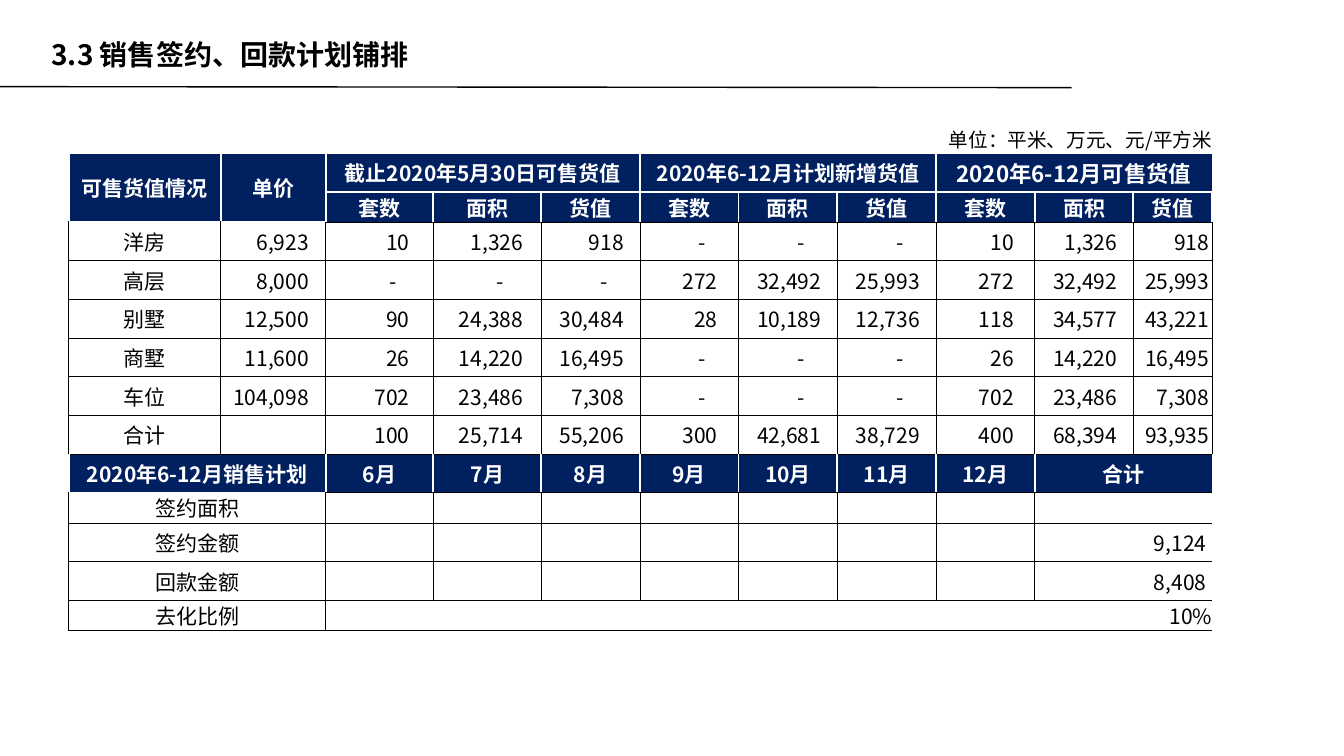
from dataclasses import dataclass, replace

import lxml.etree
import pptx
import pptx.dml.color
import pptx.enum.shapes
import pptx.enum.text
import pptx.oxml.ns
import pptx.util

Pt = pptx.util.Pt
qn = pptx.oxml.ns.qn
Align = pptx.enum.text.PP_ALIGN
Anchor = pptx.enum.text.MSO_ANCHOR

FONT = "Noto Sans CJK SC"
BLACK, WHITE, NAVY = "000000", "FFFFFF", "002060"
PLAIN_TABLE = "{2D5ABB26-0587-4C30-8999-92F81FD0307C}"
COLUMN_WIDTHS = [108.7, 74.9, 77, 77] + [70.5] * 6 + [56.2]
TALL, LOW = 27.6, 21.8
ROW_HEIGHTS = [20.7, TALL, LOW] + [TALL] * 7 + [LOW, TALL, TALL, LOW]
NUMBER_INSETS = [0, 12, 17, 13, 11.5, 15, 11.5, 11.5, 15, 11.5, 2]
DASH_INSET = 19

STOCK = [
    ("洋房", "6,923 10 1,326 918 - - - 10 1,326 918"),
    ("高层", "8,000 - - - 272 32,492 25,993 272 32,492 25,993"),
    ("别墅", "12,500 90 24,388 30,484 28 10,189 12,736 118 34,577 43,221"),
    ("商墅", "11,600 26 14,220 16,495 - - - 26 14,220 16,495"),
    ("车位", "104,098 702 23,486 7,308 - - - 702 23,486 7,308"),
]
STOCK_TOTAL = "100 25,714 55,206 300 42,681 38,729 400 68,394 93,935"


@dataclass(frozen=True)
class Border:
    color: str
    width: float


THIN = Border(BLACK, 0.5)
THICK = Border(WHITE, 1.5)


@dataclass(frozen=True)
class Look:
    size: float = 15
    bold: bool = False
    ink: str = BLACK
    fill: str | None = None
    align: Align = Align.CENTER
    left_inset: float = 0
    right_inset: float = 0
    left: Border | None = THIN
    top: Border | None = THIN
    right: Border | None = THIN
    bottom: Border | None = THIN


@dataclass(frozen=True)
class Entry:
    row: int
    column: int
    text: str = ""
    look: Look = Look()
    rows: int = 1
    columns: int = 1


BODY = Look()
HEAD = Look(bold=True, ink=WHITE, fill=NAVY, left=THICK, top=THICK, right=THICK, bottom=THICK)
HEAD_OVER_BODY = replace(HEAD, bottom=THIN)
MONTH = replace(HEAD_OVER_BODY, top=THIN)
UNIT = Look(size=14, align=Align.RIGHT, left=None, top=None, right=None, bottom=THICK)


def rgb(color: str) -> pptx.dml.color.RGBColor:
    return pptx.dml.color.RGBColor.from_string(color)


def style_paragraph(paragraph, size: float, bold: bool, color: str, align: Align) -> None:
    paragraph.alignment = align
    font = paragraph.font
    font.size, font.bold, font.name = Pt(size), bold, FONT
    font.color.rgb = rgb(color)
    east_asian = lxml.etree.Element(qn("a:ea"), typeface=FONT)
    paragraph._p.pPr.find(qn("a:defRPr")).find(qn("a:latin")).addnext(east_asian)


def draw_border(cell, side: str, border: Border | None) -> None:
    properties = cell._tc.get_or_add_tcPr()
    line = lxml.etree.SubElement(properties, qn(f"a:{side}"))
    if border is None:
        lxml.etree.SubElement(line, qn("a:noFill"))
        return
    line.set("w", str(Pt(border.width)))
    fill = lxml.etree.SubElement(line, qn("a:solidFill"))
    lxml.etree.SubElement(fill, qn("a:srgbClr"), val=border.color)


def fill_cell(cell, color: str | None) -> None:
    if color:
        cell.fill.solid()
        cell.fill.fore_color.rgb = rgb(color)
    else:
        cell.fill.background()


def draw_entry(table, entry: Entry) -> None:
    look = entry.look
    last_row = entry.row + entry.rows - 1
    last_column = entry.column + entry.columns - 1
    for row in range(entry.row, last_row + 1):
        for column in range(entry.column, last_column + 1):
            cell = table.cell(row, column)
            cell.margin_left = cell.margin_right = cell.margin_top = cell.margin_bottom = 0
            if column == entry.column:
                draw_border(cell, "lnL", look.left)
            if column == last_column:
                draw_border(cell, "lnR", look.right)
            if row == entry.row:
                draw_border(cell, "lnT", look.top)
            if row == last_row:
                draw_border(cell, "lnB", look.bottom)
            fill_cell(cell, look.fill)
            style_paragraph(cell.text_frame.paragraphs[0], look.size, look.bold, look.ink, look.align)
    first = table.cell(entry.row, entry.column)
    if entry.rows * entry.columns > 1:
        first.merge(table.cell(last_row, last_column))
    first.margin_left, first.margin_right = Pt(look.left_inset), Pt(look.right_inset)
    first.vertical_anchor = Anchor.MIDDLE
    paragraph = first.text_frame.paragraphs[0]
    if entry.text:
        paragraph.add_run().text = entry.text
    else:
        lxml.etree.SubElement(paragraph._p, qn("a:endParaRPr"), sz=str(look.size * 100))


def number_look(text: str, inset: float) -> Look:
    if text == "-":
        return replace(BODY, left_inset=DASH_INSET)
    return replace(BODY, align=Align.RIGHT, right_inset=inset)


def stock_entries() -> list[Entry]:
    entries = [Entry(0, column, look=UNIT) for column in range(8)]
    entries += [
        Entry(0, 8, "单位：平米、万元、元/平方米", UNIT, columns=3),
        Entry(1, 0, "可售货值情况", HEAD_OVER_BODY, rows=2),
        Entry(1, 1, "单价", HEAD_OVER_BODY, rows=2),
        Entry(1, 2, "截止2020年5月30日可售货值", HEAD, columns=3),
        Entry(1, 5, "2020年6-12月计划新增货值", HEAD, columns=3),
        Entry(1, 8, "2020年6-12月可售货值", replace(HEAD, size=16), columns=3),
    ]
    entries += [Entry(2, 2 + i, name, HEAD_OVER_BODY) for i, name in enumerate(["套数", "面积", "货值"] * 3)]
    lines = [(name, numbers.split()) for name, numbers in STOCK]
    lines.append(("合计", [""] + STOCK_TOTAL.split()))
    for row, (name, numbers) in enumerate(lines, 3):
        entries.append(Entry(row, 0, name))
        for column, number in enumerate(numbers, 1):
            entries.append(Entry(row, column, number, number_look(number, NUMBER_INSETS[column])))
    return entries


def plan_entries() -> list[Entry]:
    entries = [Entry(9, 0, "2020年6-12月销售计划", replace(MONTH, bottom=THICK), columns=2)]
    entries += [Entry(9, month - 4, f"{month}月", MONTH) for month in range(6, 13)]
    entries.append(Entry(9, 9, "合计", replace(MONTH, right=None), columns=2))
    for row, (name, total) in enumerate([("签约面积", ""), ("签约金额", "9,124"), ("回款金额", "8,408")], 10):
        name_look = replace(BODY, top=THICK) if row == 10 else BODY
        entries.append(Entry(row, 0, name, name_look, columns=2))
        entries += [Entry(row, column) for column in range(2, 9)]
        entries.append(Entry(row, 9, total, number_look(total, 4), columns=2))
    entries.append(Entry(13, 0, "去化比例", columns=2))
    entries.append(Entry(13, 2, "10%", number_look("10%", 0), columns=9))
    return entries


def draw_table(slide) -> None:
    frame = slide.shapes.add_table(
        len(ROW_HEIGHTS), len(COLUMN_WIDTHS), Pt(49), Pt(88.6), Pt(sum(COLUMN_WIDTHS)), Pt(sum(ROW_HEIGHTS))
    )
    table = frame.table
    table.first_row = table.horz_banding = False
    table._tbl.tblPr.find(qn("a:tableStyleId")).text = PLAIN_TABLE
    for column, width in zip(table.columns, COLUMN_WIDTHS):
        column.width = Pt(width)
    for row, height in zip(table.rows, ROW_HEIGHTS):
        row.height = Pt(height)
    for entry in stock_entries() + plan_entries():
        draw_entry(table, entry)


def draw_heading(slide) -> None:
    rule = slide.shapes.add_connector(
        pptx.enum.shapes.MSO_CONNECTOR.STRAIGHT, Pt(0), Pt(61.9), Pt(765.4), Pt(62.6)
    )
    rule.line.color.rgb, rule.line.width = rgb(BLACK), Pt(1)
    lxml.etree.SubElement(rule._element.spPr, qn("a:effectLst"))
    title = slide.shapes.title
    title.left, title.top, title.width, title.height = Pt(29.5), Pt(23), Pt(779), Pt(39.6)
    title.text_frame.text = "3.3 销售签约、回款计划铺排"
    title.text_frame.auto_size = pptx.enum.text.MSO_AUTO_SIZE.NONE
    title.text_frame.vertical_anchor = Anchor.TOP
    style_paragraph(title.text_frame.paragraphs[0], 20, True, BLACK, Align.LEFT)


def main() -> None:
    deck = pptx.Presentation()
    deck.slide_width, deck.slide_height = Pt(960), Pt(540)
    slide = deck.slides.add_slide(deck.slide_layouts[5])
    draw_heading(slide)
    draw_table(slide)
    deck.save("out.pptx")


if __name__ == "__main__":
    main()
